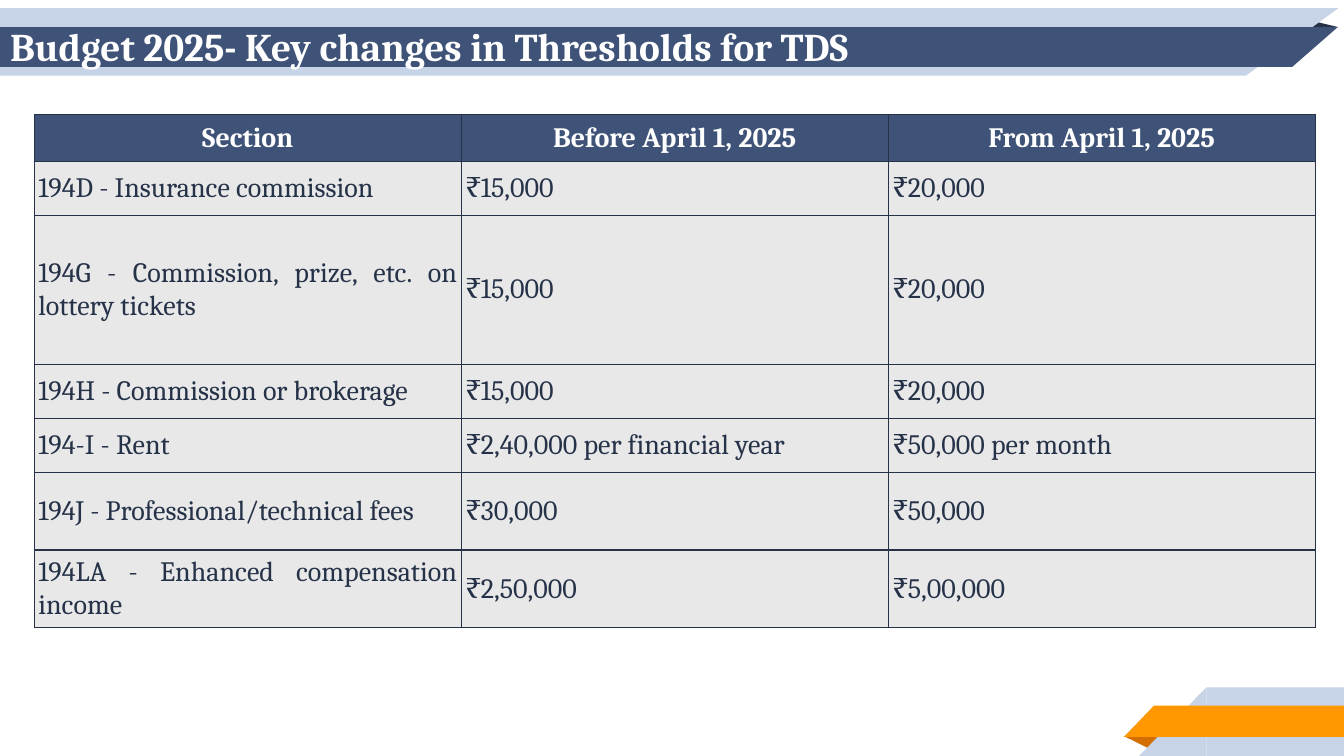
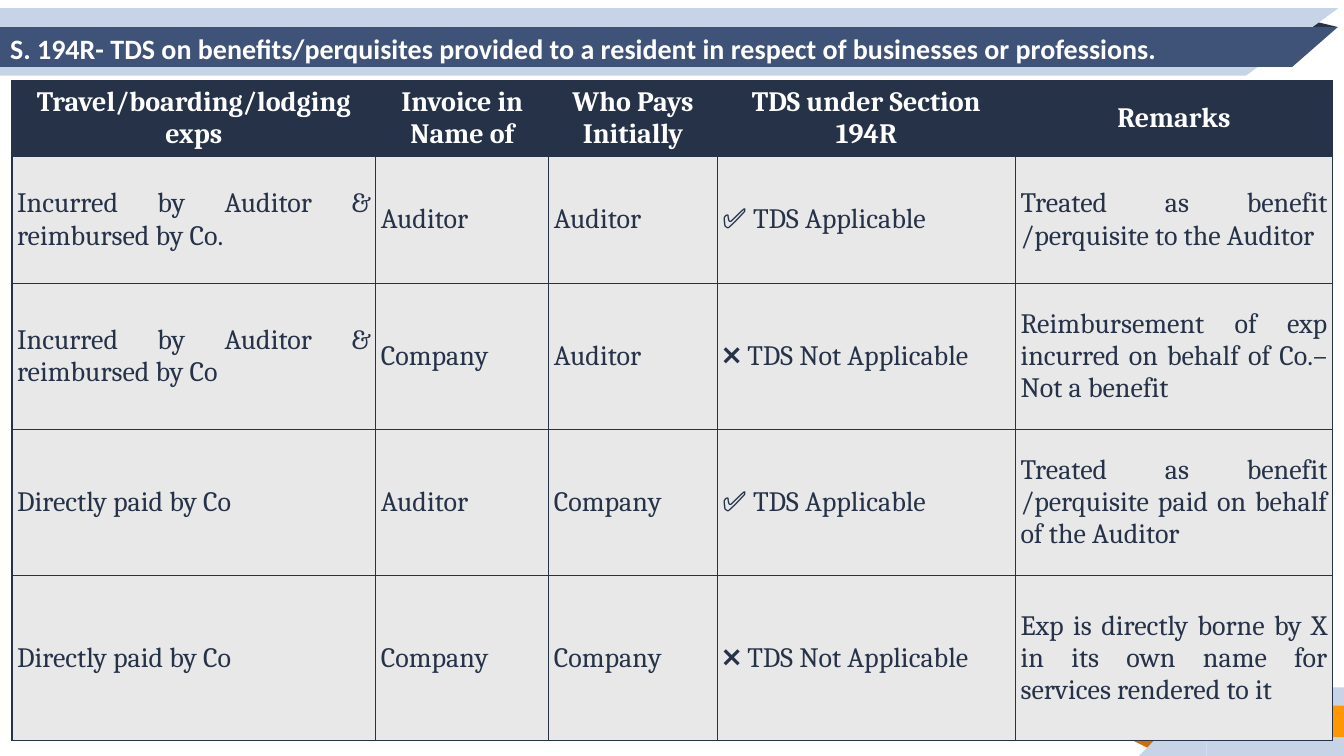
from lxml import etree
from pptx import Presentation
from pptx.dml.color import RGBColor
from pptx.enum.shapes import MSO_SHAPE
from pptx.enum.text import MSO_ANCHOR, MSO_AUTO_SIZE, PP_ALIGN
from pptx.oxml.ns import qn
from pptx.util import Pt

RECTANGLE = MSO_SHAPE.RECTANGLE
TRIANGLE = MSO_SHAPE.ISOSCELES_TRIANGLE
RIGHT_TRIANGLE = MSO_SHAPE.RIGHT_TRIANGLE
MIDDLE = MSO_ANCHOR.MIDDLE
LEFT, CENTER, JUSTIFY = PP_ALIGN.LEFT, PP_ALIGN.CENTER, PP_ALIGN.JUSTIFY

NAVY = "263248"
BLUE = "3F5378"
PALE_BLUE = "C7D3E6"
ORANGE = "FF9800"
DARK_ORANGE = "D26F00"
GREY = "E8E8E9"
WHITE = "FFFFFF"

SLIDE_WIDTH, SLIDE_HEIGHT = 960, 540
TITLE_HEIGHT = 46.8

THRESHOLDS = [
    ["Section", "Before April 1, 2025", "From April 1, 2025"],
    ["194D - Insurance commission", "₹15,000", "₹20,000"],
    ["194G - Commission, prize, etc. on lottery tickets", "₹15,000", "₹20,000"],
    ["194H - Commission or brokerage", "₹15,000", "₹20,000"],
    ["194-I - Rent", "₹2,40,000 per financial year", "₹50,000 per month"],
    ["194J - Professional/technical fees", "₹30,000", "₹50,000"],
    ["194LA - Enhanced compensation income", "₹2,50,000", "₹5,00,000"],
]

PERQUISITES = [
    ["Travel/boarding/lodging exps", "Invoice in Name of", "Who Pays Initially",
     "TDS under Section 194R", "Remarks"],
    ["Incurred by Auditor & reimbursed by Co.", "Auditor", "Auditor",
     "✅ TDS Applicable", "Treated as benefit /perquisite to the Auditor"],
    ["Incurred by Auditor & reimbursed by Co", "Company", "Auditor",
     "❌ TDS Not Applicable",
     "Reimbursement of exp incurred on behalf of Co.– Not a benefit"],
    ["Directly paid by Co", "Auditor", "Company", "✅ TDS Applicable",
     "Treated as benefit /perquisite paid on behalf of the Auditor"],
    ["Directly paid by Co", "Company", "Company", "❌ TDS Not Applicable",
     "Exp is directly borne by X in its own name for services rendered to it"],
]


def rgb(value):
    return RGBColor.from_string(value)


def add_span(para, text, font, size, color, bold):
    span = para.add_run()
    span.text = text
    span.font.name = font
    span.font.size = Pt(size)
    span.font.bold = bold
    span.font.color.rgb = rgb(color)


def add_plain_shape(page, kind, left, top, width, height, fill, turned=False):
    shape = page.shapes.add_shape(kind, Pt(left), Pt(top), Pt(width), Pt(height))
    shape.shadow.inherit = False
    shape.fill.solid()
    shape.fill.fore_color.rgb = rgb(fill)
    shape.line.fill.background()
    if turned:
        shape.rotation = 180
    return shape


def add_fold(page, left, top, width, height, fill, turned=False):
    """Add the small dark triangle that looks like the back of a ribbon."""
    fold = add_plain_shape(page, TRIANGLE, left, top, width, height, fill, turned)
    fold.adjustments[0] = 0.32


def add_ribbon(page, edge, joint, tip, top, height, fill):
    """Add a bar from a slide edge to joint, with a slanted end that reaches tip."""
    points_right = tip > joint
    for kind, start, end in ((RECTANGLE, edge, joint), (RIGHT_TRIANGLE, joint, tip)):
        part = add_plain_shape(page, kind, min(start, end), top, abs(end - start),
                               height, fill, points_right)
        part.element.spPr.find(qn("a:xfrm")).set("flipH", "1")


def add_ribbons(page):
    add_fold(page, 890, 8.6, 66, 10.8, NAVY)
    add_ribbon(page, 0, 890, 956, 5.8, 48.2, PALE_BLUE)
    add_ribbon(page, 0, 923, 955.5, 19.4, 28.4, BLUE)
    add_fold(page, 802.8, 525.8, 28, 9.4, DARK_ORANGE, turned=True)
    add_ribbon(page, SLIDE_WIDTH, 861.8, 813.6, 491, 49, PALE_BLUE)
    add_ribbon(page, SLIDE_WIDTH, 824.4, 802.8, 504, 22.4, ORANGE)


def format_title(page, text, top, width, font, size):
    title = page.shapes.title
    title.left, title.top = Pt(0), Pt(top)
    title.width, title.height = Pt(width), Pt(TITLE_HEIGHT)
    title.element.getparent().append(title.element)  # in front of the ribbons
    frame = title.text_frame
    frame.word_wrap = True
    frame.auto_size = MSO_AUTO_SIZE.NONE
    frame.vertical_anchor = MIDDLE
    frame.margin_left = frame.margin_right = Pt(7.2)
    frame.margin_top = frame.margin_bottom = Pt(7.2)
    para = frame.paragraphs[0]
    para.alignment = LEFT
    add_span(para, text, font, size, WHITE, True)


def add_page(deck, title, top, width, font, size):
    page = deck.slides.add_slide(deck.slide_layouts[5])
    add_ribbons(page)
    format_title(page, title, top, width, font, size)
    return page


def set_borders(cell, color, width):
    properties = cell._tc.get_or_add_tcPr()
    for position, side in enumerate(("lnL", "lnR", "lnT", "lnB")):
        line = etree.Element(qn(f"a:{side}"), w=str(Pt(width)))
        fill = etree.SubElement(line, qn("a:solidFill"))
        etree.SubElement(fill, qn("a:srgbClr"), val=color)
        properties.insert(position, line)


def fill_cell(cell, text, alignment, side_margin, fill, color, bold):
    cell.fill.solid()
    cell.fill.fore_color.rgb = rgb(fill)
    cell.vertical_anchor = MIDDLE
    cell.margin_left = cell.margin_right = Pt(side_margin)
    cell.margin_top = cell.margin_bottom = Pt(1.6)
    para = cell.text_frame.paragraphs[0]
    para.alignment = alignment
    add_span(para, text, "Cambria", 20, color, bold)
    set_borders(cell, NAVY, 1)


def add_grid(page, rows, left, top, widths, heights, header_fill, side_margin,
             left_columns=()):
    """Add a table with a dark header; body text is justified except in left_columns."""
    table = page.shapes.add_table(len(rows), len(widths), Pt(left), Pt(top),
                                  Pt(sum(widths)), Pt(sum(heights))).table
    table.horz_banding = False
    for column, width in zip(table.columns, widths):
        column.width = Pt(width)
    for row, height in zip(table.rows, heights):
        row.height = Pt(height)
    for row_index, texts in enumerate(rows):
        for column_index, text in enumerate(texts):
            cell = table.cell(row_index, column_index)
            if row_index == 0:
                fill_cell(cell, text, CENTER, side_margin, header_fill, WHITE, True)
            else:
                alignment = LEFT if column_index in left_columns else JUSTIFY
                fill_cell(cell, text, alignment, side_margin, GREY, NAVY, False)


def main():
    deck = Presentation()
    deck.slide_width, deck.slide_height = Pt(SLIDE_WIDTH), Pt(SLIDE_HEIGHT)

    page = add_page(deck, "Budget 2025- Key changes in Thresholds for TDS",
                    9.4, 774.7, "Cambria", 28)
    add_grid(page, THRESHOLDS, 24.5, 82, [305] * 3,
             [33.4, 38.6, 106.2, 38.6, 38.6, 55.6, 55.6], BLUE, 2.9)

    page = add_page(deck, "S. 194R- TDS on benefits/perquisites provided to a resident "
                    "in respect of businesses or professions.",
                    10.8, 933.8, "Calibri", 20)
    add_grid(page, PERQUISITES, 8.6, 57.6, [259.8, 123.6, 120.4, 213, 226.4],
             [54, 90.8, 104.4, 104.4, 118], NAVY, 3.6, left_columns=(3,))

    deck.save("out.pptx")


if __name__ == "__main__":
    main()
